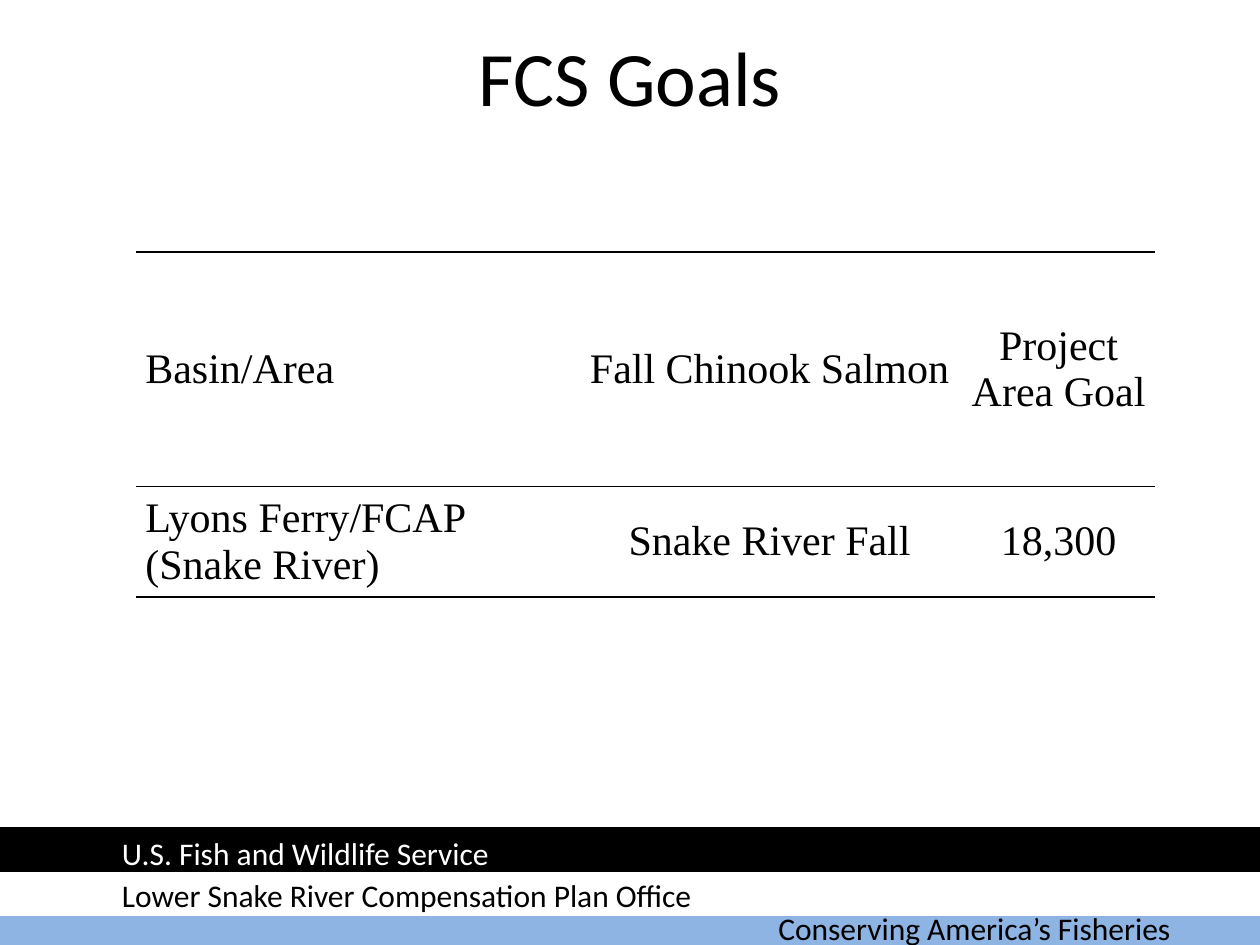
from lxml.etree import SubElement
from pptx import Presentation
from pptx.dml.color import RGBColor
from pptx.enum.shapes import MSO_SHAPE as Shape
from pptx.enum.text import MSO_ANCHOR as Anchor, PP_ALIGN as Align
from pptx.oxml.ns import qn
from pptx.util import Cm, Pt

BLACK, WHITE, BLUE = "000000", "FFFFFF", "8EB4E3"
TITLE = ("FCS Goals", 1.27, 0.43, 22.86, 2.21)
BANDS = [(18.21, BLUE), (17.6, WHITE), (16.71, BLACK)]
BAND_HEIGHT = 0.84
FOOTER = [
    ("Conserving America’s Fisheries", 15.44, 18.21, 9.32, BLACK),
    ("U.S. Fish and Wildlife Service", 2.21, 16.69, 10.57, WHITE),
    ("Lower Snake River Compensation Plan Office", 2.21, 17.53, 12.62, BLACK),
]
GOALS = [
    ("Basin/Area", "Fall Chinook Salmon", "Project Area Goal"),
    ("Lyons Ferry/FCAP (Snake River)", "Snake River Fall", "18,300"),
]
TABLE_LEFT, TABLE_TOP = 2.75, 5.08
COLUMN_WIDTHS = (8.88, 7.77, 3.88)
ROW_HEIGHTS = (4.73, 2.22)
RULE_WIDTHS = (1.5, 1, 1)


def color(value):
    return RGBColor.from_string(value)


def write(frame, text, size, font_name, text_color, align=Align.LEFT):
    paragraph = frame.paragraphs[0]
    paragraph.alignment = align
    run = paragraph.add_run()
    run.text = text
    run.font.size = Pt(size)
    run.font.name = font_name
    run.font.bold = False
    run.font.color.rgb = color(text_color)


def add_band(slide, top, fill, width):
    band = slide.shapes.add_shape(Shape.RECTANGLE, 0, Cm(top), width, Cm(BAND_HEIGHT))
    band.shadow.inherit = False
    band.fill.solid()
    band.fill.fore_color.rgb = color(fill)
    band.line.color.rgb = color(fill)
    band.line.width = Pt(2)


def add_text(slide, text, left, top, width, height, size, text_color, align, anchor):
    box = slide.shapes.add_textbox(Cm(left), Cm(top), Cm(width), Cm(height))
    frame = box.text_frame
    frame.word_wrap = True
    frame.vertical_anchor = anchor
    write(frame, text, size, "Calibri", text_color, align)


def set_border(cell, side, points):
    properties = cell._tc.get_or_add_tcPr()
    line = SubElement(properties, qn(f"a:{side}"), w=str(Pt(points)))
    if points:
        fill = SubElement(line, qn("a:solidFill"))
        SubElement(fill, qn("a:srgbClr"), val=BLACK)
    else:
        SubElement(line, qn("a:noFill"))


def add_goals_table(slide):
    table = slide.shapes.add_table(
        len(GOALS), len(COLUMN_WIDTHS), Cm(TABLE_LEFT), Cm(TABLE_TOP),
        Cm(sum(COLUMN_WIDTHS)), Cm(sum(ROW_HEIGHTS))).table
    table.first_row = False
    table.horz_banding = False
    for column, width in zip(table.columns, COLUMN_WIDTHS):
        column.width = Cm(width)
    for row, height in zip(table.rows, ROW_HEIGHTS):
        row.height = Cm(height)
    for row_index, texts in enumerate(GOALS):
        for column_index, text in enumerate(texts):
            cell = table.cell(row_index, column_index)
            cell.vertical_anchor = Anchor.MIDDLE
            cell.margin_left = cell.margin_right = Cm(0.18)
            cell.margin_top = cell.margin_bottom = 0
            for side, points in (("lnL", 0), ("lnR", 0),
                                 ("lnT", RULE_WIDTHS[row_index]),
                                 ("lnB", RULE_WIDTHS[row_index + 1])):
                set_border(cell, side, points)
            cell.fill.background()
            align = Align.CENTER if column_index else Align.LEFT
            write(cell.text_frame, text, 24, "Times New Roman", BLACK, align)


def main():
    presentation = Presentation()
    presentation.slide_width = Cm(25.4)
    presentation.slide_height = Cm(19.05)
    slide = presentation.slides.add_slide(presentation.slide_layouts[6])
    for top, fill in BANDS:
        add_band(slide, top, fill, presentation.slide_width)
    for text, left, top, width, text_color in FOOTER:
        add_text(slide, text, left, top, width, 1.02, 18, text_color, Align.LEFT, Anchor.TOP)
    add_text(slide, *TITLE, 44, BLACK, Align.CENTER, Anchor.MIDDLE)
    add_goals_table(slide)
    presentation.save("out.pptx")


if __name__ == "__main__":
    main()
